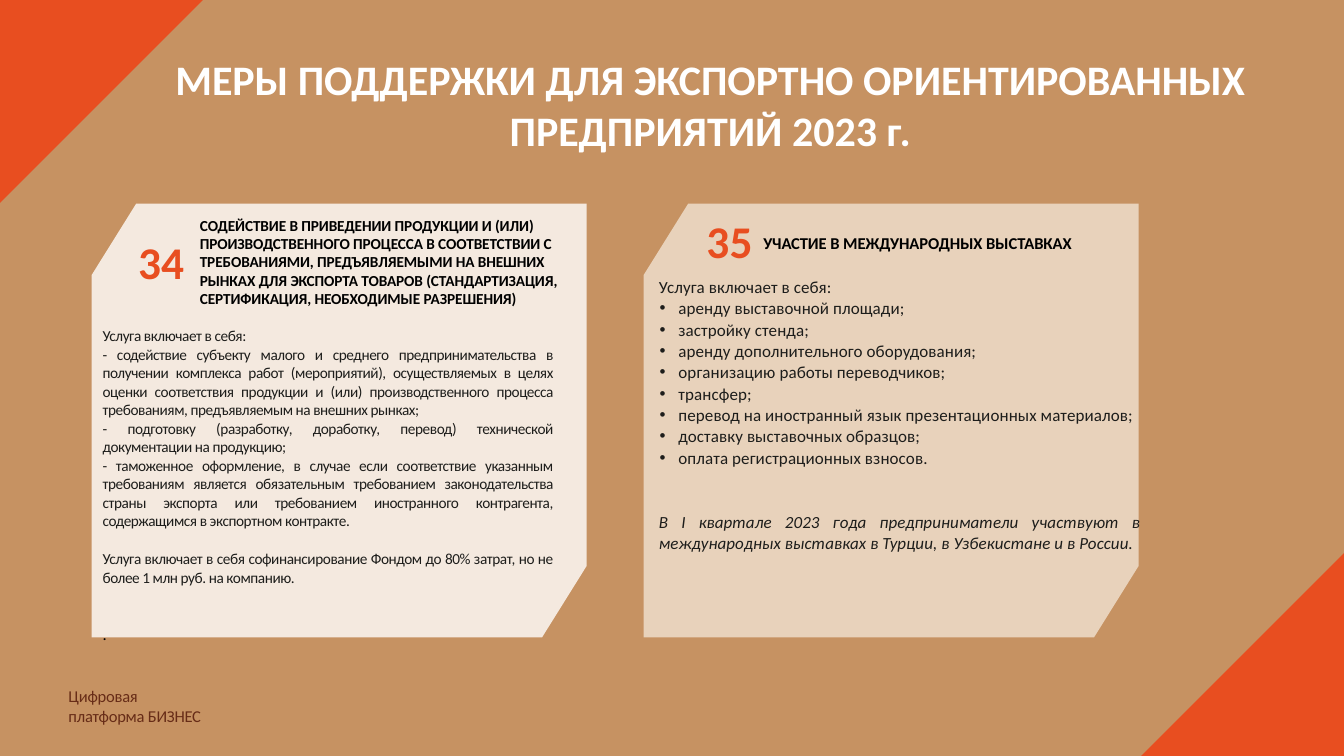
from lxml.etree import SubElement
from pptx import Presentation
from pptx.dml.color import RGBColor
from pptx.enum.text import MSO_ANCHOR, MSO_AUTO_SIZE, PP_ALIGN as ALIGN
from pptx.oxml.ns import qn
from pptx.util import Inches, Pt

SAND = RGBColor(0xC6, 0x92, 0x62)
ORANGE = RGBColor(0xE8, 0x4E, 0x20)
CREAM = RGBColor(0xF4, 0xE9, 0xDF)
BEIGE = RGBColor(0xE8, 0xD2, 0xBB)
BROWN = RGBColor(0x67, 0x2C, 0x17)
INK = RGBColor(0x1D, 0x1D, 0x1B)
BLACK = RGBColor(0, 0, 0)
WHITE = RGBColor(255, 255, 255)

prs = Presentation()
prs.slide_width, prs.slide_height = Inches(21.99), Inches(12.37)
COL, ROW = prs.slide_width / 100, prs.slide_height / 100  # grid of 100 by 100
slide = prs.slides.add_slide(prs.slide_layouts[1])
slide.background.fill.solid()
slide.background.fill.fore_color.rgb = SAND
title, body = slide.placeholders


def add_outline(points, color):
    """Draw a closed filled shape through (column, row) points."""
    corners = [(round(x * COL), round(y * ROW)) for x, y in points]
    builder = slide.shapes.build_freeform(*corners[0])
    builder.add_line_segments(corners[1:], close=True)
    sp = builder.convert_to_shape()
    sp.shadow.inherit = False
    sp.fill.solid()
    sp.fill.fore_color.rgb = color
    sp.line.fill.background()


def write(sp, box, text, size, color, bold=False, spc=0, align=ALIGN.LEFT,
          spacing=None, before=0.9):
    """Place sp in front at box (column, row, columns, rows) and fill it with text."""
    sp.element.getparent().append(sp.element)
    x, y, w, h = box
    sp.left, sp.top = round(x * COL), round(y * ROW)
    sp.width, sp.height = round(w * COL), round(h * ROW)
    tf = sp.text_frame
    tf.text = text
    tf.word_wrap = True
    tf.auto_size = MSO_AUTO_SIZE.NONE
    tf.vertical_anchor = MSO_ANCHOR.TOP
    tf.margin_left = tf.margin_top = Inches(0.01)
    tf.margin_right = tf.margin_bottom = 0
    for p in tf.paragraphs:
        p.alignment = align
        p.line_spacing = spacing
        p.space_before = Pt(before)
        for r in p.runs:
            r.font.name = "Calibri"
            r.font.size = Pt(size)
            r.font.bold = bold
            r.font.color.rgb = color
            r.font._element.set("spc", str(round(spc * 100)))
    return tf.paragraphs


# Corner triangles
TRI_W, TRI_H = 15.1, 26.84
add_outline([(0, 0), (TRI_W, 0), (0, TRI_H)], ORANGE)
add_outline([(100, 100), (100 - TRI_W, 100), (100, 100 - TRI_H)], ORANGE)

# Panels with two cut corners
TOP, PANEL_W, PANEL_H = 26.92, 36.83, 57.4
CUT_W, CUT_H = 3.32, 9.46
for left, color in [(6.82, CREAM), (47.89, BEIGE)]:
    right, bottom = left + PANEL_W, TOP + PANEL_H
    add_outline([(right, TOP), (left + CUT_W, TOP), (left, TOP + CUT_H),
                 (left, bottom), (right - CUT_W, bottom), (right, bottom - CUT_H)], color)

write(title, (9.6, 7.03, 86.45, 13.58),
      "МЕРЫ ПОДДЕРЖКИ ДЛЯ ЭКСПОРТНО ОРИЕНТИРОВАННЫХ ПРЕДПРИЯТИЙ 2023 г.",
      49.5, WHITE, bold=True, align=ALIGN.CENTER, spacing=1.0)

# Numbers, panel headings and footer
labels = [
    ((10.23, 30.88, 3.55, 7.36), "34", 53.4, ORANGE, True, 0.2),
    ((52.52, 28.13, 3.55, 7.36), "35", 53.4, ORANGE, True, 0.2),
    ((14.82, 28.46, 27.19, 12.37),
     "СОДЕЙСТВИЕ В ПРИВЕДЕНИИ ПРОДУКЦИИ И (ИЛИ) ПРОИЗВОДСТВЕННОГО ПРОЦЕССА "
     "В СООТВЕТСТВИИ С ТРЕБОВАНИЯМИ, ПРЕДЪЯВЛЯЕМЫМИ НА ВНЕШНИХ РЫНКАХ ДЛЯ ЭКСПОРТА "
     "ТОВАРОВ (СТАНДАРТИЗАЦИЯ, СЕРТИФИКАЦИЯ, НЕОБХОДИМЫЕ РАЗРЕШЕНИЯ)",
     18, BLACK, True, -0.1),
    ((56.75, 30.8, 26.47, 3.23), "УЧАСТИЕ В МЕЖДУНАРОДНЫХ ВЫСТАВКАХ", 19.5, BLACK, True, -0.1),
    ((5.05, 90.78, 12, 5.5), "Цифровая\vплатформа БИЗНЕС", 19.5, BROWN, False, -0.3),
]
for box, text, size, color, bold, spc in labels:
    sp = slide.shapes.add_textbox(0, 0, 0, 0)
    paragraphs = write(sp, box, text, size, color, bold, spc)
paragraphs[0].line_spacing = Pt(22.8)  # footer

# Left panel text
certification = "\n".join([
    "Услуга включает в себя:",
    "- содействие субъекту малого и среднего предпринимательства в получении комплекса "
    "работ (мероприятий), осуществляемых в целях оценки соответствия продукции и (или) "
    "производственного процесса требованиям, предъявляемым на внешних рынках;",
    "- подготовку (разработку, доработку, перевод) технической документации на продукцию;",
    "- таможенное оформление, в случае если соответствие указанным требованиям является "
    "обязательным требованием законодательства страны экспорта или требованием "
    "иностранного контрагента, содержащимся в экспортном контракте.",
    "Услуга включает в себя софинансирование Фондом до 80% затрат, но не более "
    "1 млн руб. на компанию.",
    ".",
])
sp = slide.shapes.add_textbox(0, 0, 0, 0)
*_, funding, dot = write(sp, (7.59, 43.09, 33.56, 43.33), certification, 18, INK,
                         spc=-0.5, align=ALIGN.JUSTIFY, spacing=1.01, before=0)
funding.space_before = Pt(22.8)
dot.space_before = Pt(44)
dot.runs[0].font.size = Pt(19.5)
dot.runs[0].font.color.rgb = BLACK

# Right panel list
exhibitions = "\n".join([
    "Услуга включает в себя:",
    "аренду выставочной площади;",
    "застройку стенда;",
    "аренду дополнительного оборудования;",
    "организацию работы переводчиков;",
    "трансфер;",
    "перевод на иностранный язык презентационных материалов;",
    "доставку выставочных образцов;",
    "оплата регистрационных взносов.",
    "В I квартале 2023 года предприниматели участвуют в международных выставках "
    "в Турции, в Узбекистане и в России.",
])
intro, *items, note = write(body, (48.98, 36.46, 35.88, 59.82), exhibitions, 20, INK,
                            spc=0.1, spacing=1.01)
note.alignment = ALIGN.JUSTIFY
note.space_before = Pt(51.9)
note.runs[0].font.italic = True
for p in (intro, note):
    pPr = p._p.get_or_add_pPr()
    pPr.set("marL", "0")
    pPr.set("indent", "0")
    SubElement(pPr, qn("a:buNone"))
for p in items:
    pPr = p._p.get_or_add_pPr()
    pPr.set("marL", str(Inches(0.32)))
    pPr.set("indent", str(Inches(-0.31)))
    SubElement(pPr, qn("a:buFont")).set("typeface", "Arial")
    SubElement(pPr, qn("a:buChar")).set("char", "•")

prs.save("out.pptx")
